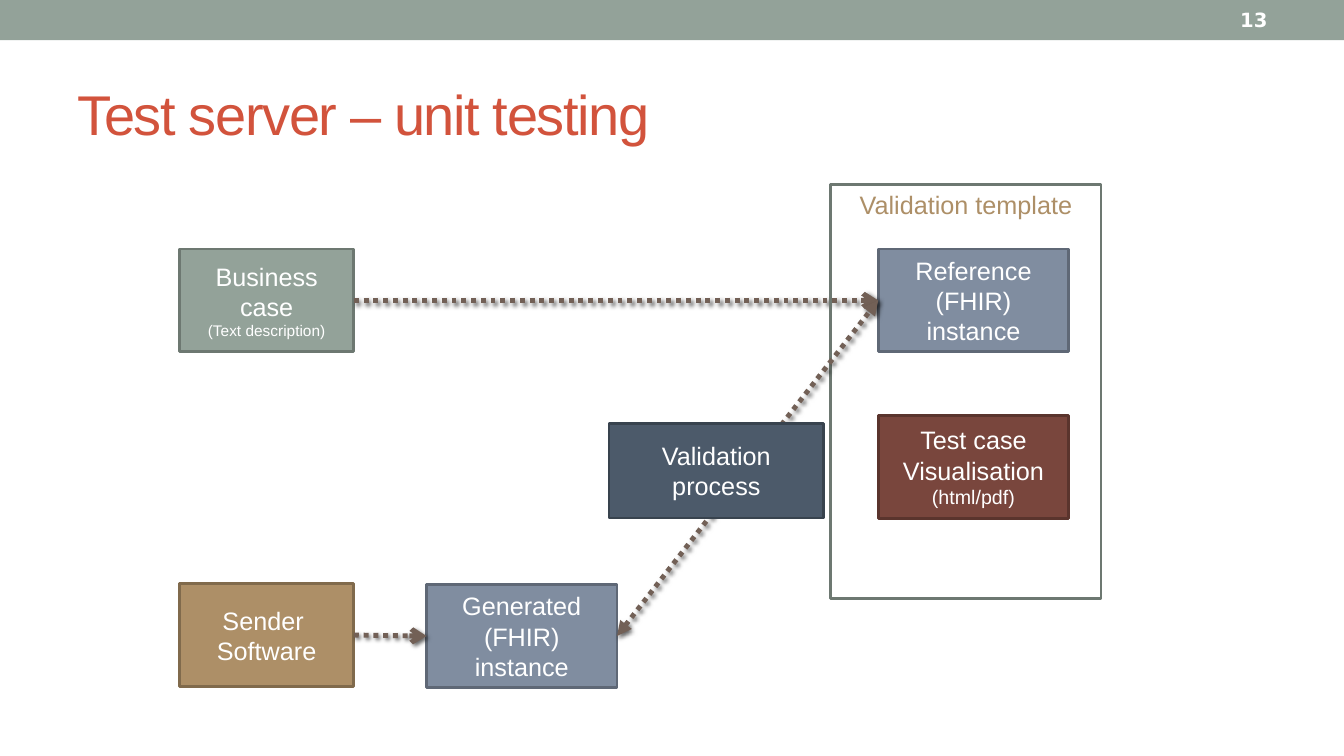
import pptx
import pptx.dml.color
import pptx.enum.dml
import pptx.enum.shapes
import pptx.enum.text
import pptx.oxml
import pptx.oxml.ns
import pptx.util

Inches, Pt = pptx.util.Inches, pptx.util.Pt
ALIGN, ANCHOR = pptx.enum.text.PP_ALIGN, pptx.enum.text.MSO_ANCHOR

TITLE = "Test server – unit testing"
PAGE_NUMBER = "13"
WHITE, SAGE, SAGE_DARK, TAN, BROWN = "FFFFFF", "93A299", "6D7871", "AD8F67", "726056"
RED, BLUE, BLUE_DARK = "D2533C", "808DA0", "5F6876"

# name: (left, top, width, height), fill, outline, [(text, size), ...]
BOXES = {
    "business": ((1.78, 2.47, 1.73, 1.02), SAGE, SAGE_DARK,
                 [("Business", 18), ("case", 18), ("(Text description)", 11)]),
    "reference": ((8.71, 2.47, 1.89, 1.02), BLUE, BLUE_DARK,
                  [("Reference", 18), ("(FHIR) instance", 18)]),
    "visualisation": ((8.71, 4.12, 1.89, 1.02), "79463D", "5A342D",
                      [("Test case\vVisualisation", 18), ("(html/pdf)", 14)]),
    "template": ((8.24, 1.83, 2.68, 4.11), None, SAGE_DARK, [("Validation template", 18)]),
    "sender": ((1.78, 5.79, 1.73, 1.02), TAN, "806A4C", [("Sender ", 18), ("Software", 18)]),
    "generated": ((4.23, 5.8, 1.89, 1.02), BLUE, BLUE_DARK,
                  [("Generated", 18), ("(FHIR) instance", 18)]),
    "process": ((6.04, 4.2, 2.13, 0.94), "4C5A6A", "38434E", [("Validation process", 18)]),
}
# start box, end box, arrowhead at start, arrowhead at end
ARROWS = {
    "describe": ("business", "reference", None, "arrow"),
    "send": ("sender", "generated", None, "arrow"),
    "compare": ("generated", "reference", "triangle", "triangle"),
}
BACK_TO_FRONT = ["business", "reference", "visualisation", "describe", "template",
                 "sender", "generated", "send", "compare", "process"]
LEFT_SIDE, RIGHT_SIDE = 1, 3


def color(value):
    return pptx.dml.color.RGBColor.from_string(value)


def format_paragraph(paragraph, size, text_color, align, font="Arial", bold=False):
    paragraph.alignment = align
    for run in paragraph.runs:
        run.font.size = Pt(size)
        run.font.name = font
        run.font.bold = bold
        run.font.color.rgb = color(text_color)


def add_rectangle(slide, place, fill, outline):
    shape = slide.shapes.add_shape(
        pptx.enum.shapes.MSO_SHAPE.RECTANGLE, *map(Inches, place))
    shape.shadow.inherit = False
    if fill:
        shape.fill.solid()
        shape.fill.fore_color.rgb = color(fill)
    else:
        shape.fill.background()
    if outline:
        shape.line.color.rgb = color(outline)
        shape.line.width = Pt(2.08)
    else:
        shape.line.fill.background()
    return shape


def add_box(slide, place, fill, outline, lines):
    shape = add_rectangle(slide, place, fill, outline)
    frame = shape.text_frame
    frame.word_wrap = True
    frame.vertical_anchor = ANCHOR.MIDDLE if fill else ANCHOR.TOP
    frame.text = "\n".join(text for text, size in lines)
    for paragraph, (text, size) in zip(frame.paragraphs, lines):
        format_paragraph(paragraph, size, WHITE if fill else TAN, ALIGN.CENTER)
    return shape


def add_arrow(slide, start, end, head, tail):
    """Join the right side of start to the left side of end with a dotted, shadowed line."""
    connector = slide.shapes.add_connector(
        pptx.enum.shapes.MSO_CONNECTOR.STRAIGHT, 0, 0, 0, 0)
    connector.begin_connect(start, RIGHT_SIDE)
    connector.end_connect(end, LEFT_SIDE)
    connector.line.color.rgb = color(BROWN)
    connector.line.width = Pt(3.5)
    connector.line.dash_style = pptx.enum.dml.MSO_LINE.ROUND_DOT
    line = connector.line._get_or_add_ln()
    namespace = pptx.oxml.ns.nsdecls("a")
    for tag, kind in (("headEnd", head), ("tailEnd", tail)):
        if kind:
            line.append(pptx.oxml.parse_xml(f'<a:{tag} {namespace} type="{kind}"/>'))
    connector._element.spPr.append(pptx.oxml.parse_xml(
        f'<a:effectLst {namespace}><a:outerShdw blurRad="{Pt(3)}" dist="{Pt(2)}" '
        'dir="2700000" rotWithShape="0"><a:srgbClr val="000000"><a:alpha val="60000"/>'
        '</a:srgbClr></a:outerShdw></a:effectLst>'))


def add_title(slide):
    title = slide.shapes.title
    title.left, title.top, title.width, title.height = map(Inches, (0.67, 0.58, 12, 1.08))
    title.text_frame.text = TITLE
    title.text_frame.vertical_anchor = ANCHOR.MIDDLE
    paragraph = title.text_frame.paragraphs[0]
    format_paragraph(paragraph, 40, RED, ALIGN.LEFT)
    paragraph.runs[0].font._element.set("spc", "-100")


def add_page_number(slide):
    frame = slide.shapes.add_textbox(*map(Inches, (11.11, 0.02, 1.56, 0.36))).text_frame
    frame.word_wrap = True
    frame.vertical_anchor = ANCHOR.MIDDLE
    frame.text = PAGE_NUMBER
    format_paragraph(frame.paragraphs[0], 14, WHITE, ALIGN.RIGHT, "DejaVu Sans", True)


def main():
    presentation = pptx.Presentation()
    presentation.slide_width, presentation.slide_height = Inches(13.33), Inches(7.5)
    slide = presentation.slides.add_slide(presentation.slide_layouts.get_by_name("Title Only"))
    add_rectangle(slide, (0, 0, 13.33, 0.4), SAGE, None)
    add_title(slide)
    add_page_number(slide)

    shapes = {}
    for name in BACK_TO_FRONT:
        if name in BOXES:
            shapes[name] = add_box(slide, *BOXES[name])
        else:
            start, end, head, tail = ARROWS[name]
            add_arrow(slide, shapes[start], shapes[end], head, tail)
    presentation.save("out.pptx")


if __name__ == "__main__":
    main()
